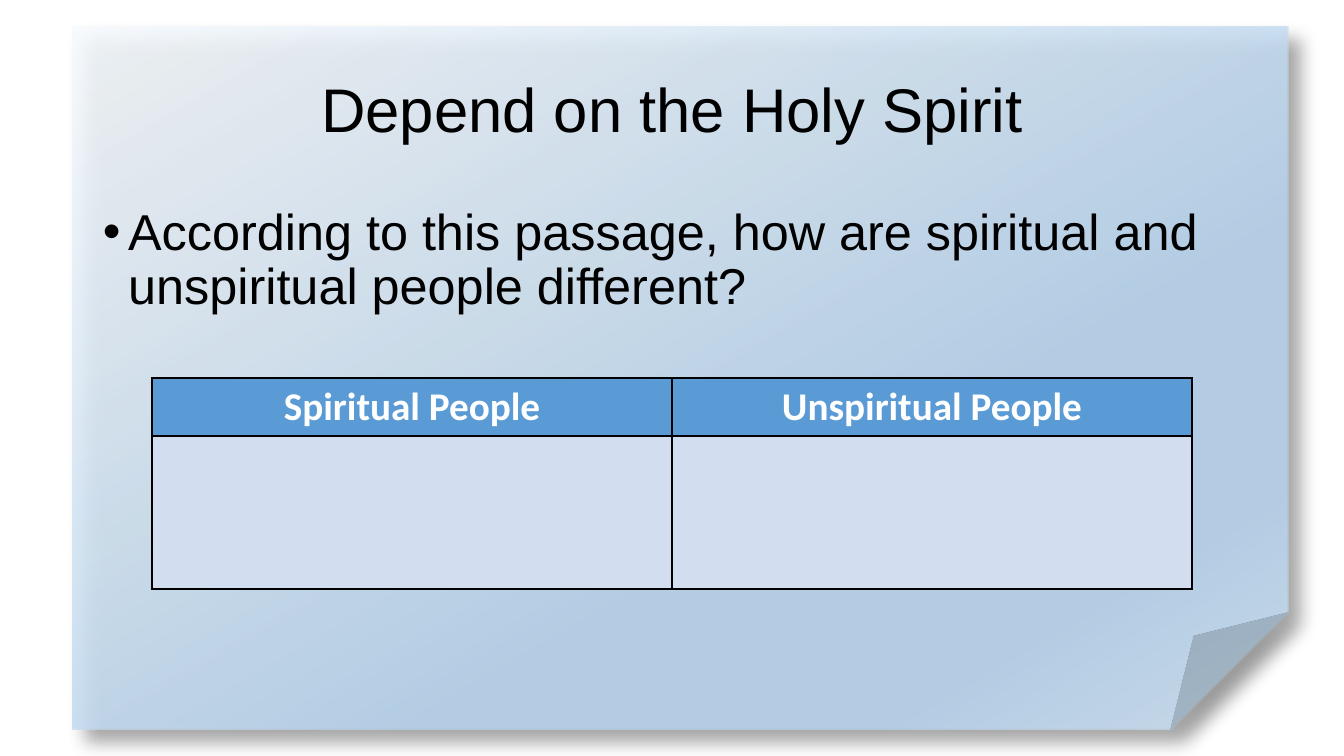
from typing import NamedTuple

from lxml import etree
from pptx import Presentation
from pptx.dml.color import RGBColor
from pptx.enum.shapes import MSO_SHAPE
from pptx.enum.text import MSO_ANCHOR, PP_ALIGN
from pptx.oxml import parse_xml
from pptx.oxml.ns import qn
from pptx.util import Emu, Pt

FOLDED_CORNER = MSO_SHAPE.FOLDED_CORNER
LEFT, CENTER = PP_ALIGN.LEFT, PP_ALIGN.CENTER
TOP, MIDDLE = MSO_ANCHOR.TOP, MSO_ANCHOR.MIDDLE
NAMESPACE = 'xmlns:a="http://schemas.openxmlformats.org/drawingml/2006/main"'

PX_PER_INCH = 100.8
TITLE_ONLY = 5
BLACK, WHITE = "000000", "FFFFFF"
HEADER_FILL, ANSWER_FILL = "5B9BD5", "D2DEEF"


class Box(NamedTuple):
    left: int
    top: int
    width: int
    height: int


class GradientStop(NamedTuple):
    position: int
    color: str


class TableRow(NamedTuple):
    height: int
    fill: str
    texts: tuple[str, ...]


SHEET = Box(73, 27, 1215, 703)
TITLE = Box(93, 40, 1159, 146)
QUESTION = Box(93, 202, 1159, 150)
COMPARISON = Box(152, 378, 1040, 211)

SHEET_STOPS = (
    GradientStop(0, "F7FAFD"),
    GradientStop(64, "B5D2EC"),
    GradientStop(83, "B5D2EC"),
    GradientStop(100, "CEE1F2"),
)
SHEET_OPACITY = 87

COMPARISON_ROWS = (
    TableRow(58, HEADER_FILL, ("Spiritual People", "Unspiritual People")),
    TableRow(153, ANSWER_FILL, ("", "")),
)


def px(length: int) -> Emu:
    return Emu(round(length * 914400 / PX_PER_INCH))


def place(box: Box) -> tuple[Emu, ...]:
    return tuple(px(length) for length in box)


def rgb(color: str) -> RGBColor:
    return RGBColor.from_string(color)


def drawing(tag: str, attributes: str, content: str = ""):
    return parse_xml(f"<a:{tag} {NAMESPACE} {attributes}>{content}</a:{tag}>")


def write(text_frame, text: str, *, size: int, font: str = "Arial",
          color: str = BLACK, bold: bool = False, align=LEFT,
          spacing: float = 1.0, bullet: bool = False) -> None:
    paragraph = text_frame.paragraphs[0]
    paragraph.alignment = align
    paragraph.line_spacing = spacing
    if bullet:
        properties = paragraph._p.get_or_add_pPr()
        properties.set("marL", "228600")
        properties.set("indent", "-228600")
        properties.append(drawing("buFont", 'typeface="Arial"'))
        properties.append(drawing("buChar", 'char="•"'))
    run = paragraph.add_run()
    run.text = text
    run.font.name = font
    run.font.size = Pt(size)
    run.font.bold = bold
    run.font.color.rgb = rgb(color)


def add_sheet(slide) -> None:
    shape = slide.shapes.add_shape(FOLDED_CORNER, *place(SHEET))
    shape.line.fill.background()
    properties = shape._element.spPr
    stops = "".join(
        f'<a:gs pos="{stop.position * 1000}"><a:srgbClr val="{stop.color}">'
        f'<a:alpha val="{SHEET_OPACITY * 1000}"/></a:srgbClr></a:gs>'
        for stop in SHEET_STOPS
    )
    gradient = drawing(
        "gradFill", 'rotWithShape="1"',
        f'<a:gsLst>{stops}</a:gsLst><a:lin ang="3600000" scaled="0"/>')
    properties.find(qn("a:prstGeom")).addnext(gradient)
    shadow = etree.SubElement(properties, qn("a:effectLst"))
    shadow.append(drawing(
        "outerShdw",
        f'blurRad="{Pt(13)}" dist="{Pt(13)}" dir="2700000" algn="tl" rotWithShape="0"',
        f'<a:srgbClr val="{BLACK}"><a:alpha val="40000"/></a:srgbClr>'))
    # Send the sheet behind the title
    slide.shapes._spTree.insert(2, shape._element)


def add_title(slide) -> None:
    title = slide.shapes.title
    title.left, title.top, title.width, title.height = place(TITLE)
    title.text_frame.vertical_anchor = MIDDLE
    write(title.text_frame, "Depend on the Holy Spirit", size=44,
          align=CENTER, spacing=0.9)


def add_question(slide) -> None:
    text_frame = slide.shapes.add_textbox(*place(QUESTION)).text_frame
    text_frame.word_wrap = True
    write(text_frame,
          "According to this passage, how are spiritual and unspiritual people different?",
          size=36, spacing=0.9, bullet=True)


def add_borders(cell) -> None:
    properties = cell._tc.get_or_add_tcPr()
    for index, side in enumerate(("lnL", "lnR", "lnT", "lnB")):
        properties.insert(index, drawing(
            side, f'w="{Pt(1)}"',
            f'<a:solidFill><a:srgbClr val="{BLACK}"/></a:solidFill>'))


def add_comparison(slide) -> None:
    column_count = len(COMPARISON_ROWS[0].texts)
    table = slide.shapes.add_table(
        len(COMPARISON_ROWS), column_count, *place(COMPARISON)).table
    for column in table.columns:
        column.width = px(COMPARISON.width // column_count)
    for row_index, row in enumerate(COMPARISON_ROWS):
        table.rows[row_index].height = px(row.height)
        for column_index, text in enumerate(row.texts):
            cell = table.cell(row_index, column_index)
            cell.vertical_anchor = TOP
            cell.fill.solid()
            cell.fill.fore_color.rgb = rgb(row.fill)
            add_borders(cell)
            if text:
                write(cell.text_frame, text, size=28, font="Calibri",
                      color=WHITE, bold=True, align=CENTER)


def main() -> None:
    presentation = Presentation()
    presentation.slide_width, presentation.slide_height = px(1344), px(756)
    slide = presentation.slides.add_slide(presentation.slide_layouts[TITLE_ONLY])
    slide.background.fill.solid()
    slide.background.fill.fore_color.rgb = rgb(WHITE)
    add_sheet(slide)
    add_title(slide)
    add_question(slide)
    add_comparison(slide)
    presentation.save("out.pptx")


if __name__ == "__main__":
    main()
